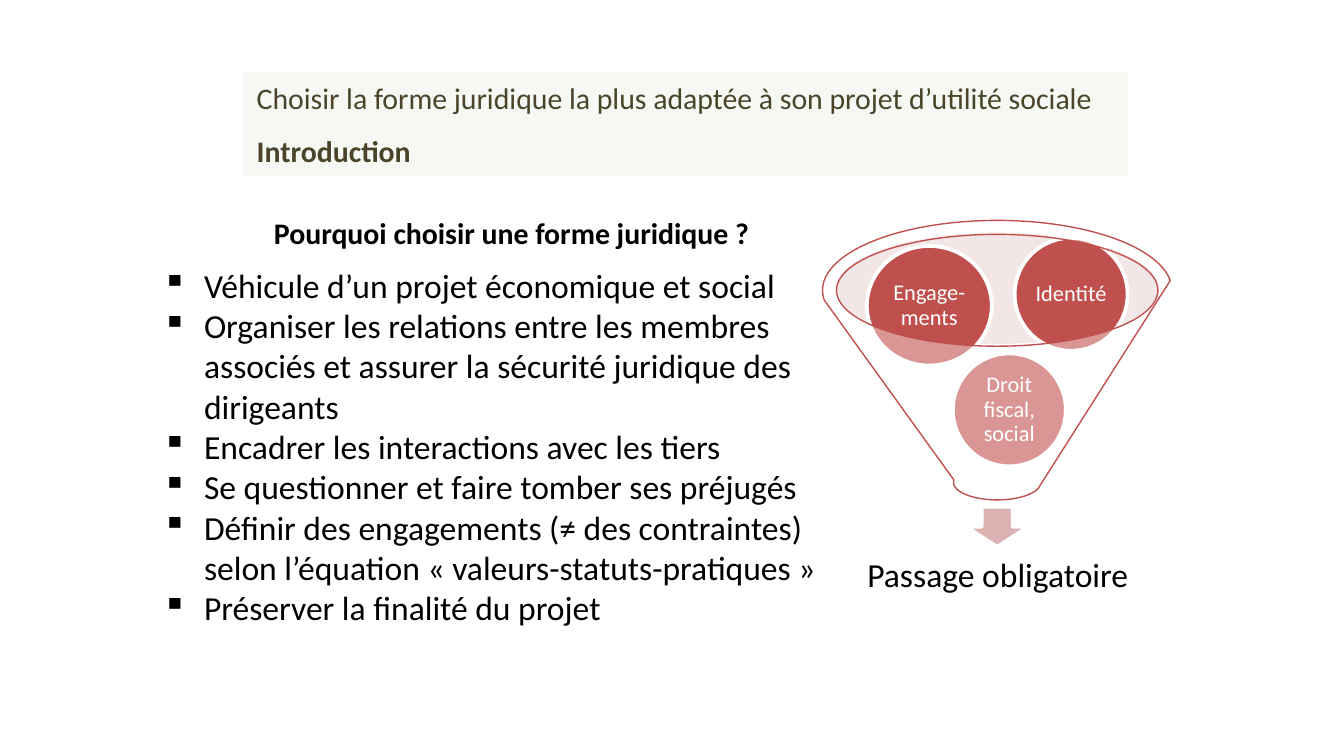
from lxml import etree
from pptx import Presentation
from pptx.dml.color import RGBColor
from pptx.enum.shapes import MSO_SHAPE
from pptx.enum.text import MSO_ANCHOR, MSO_AUTO_SIZE, PP_ALIGN
from pptx.oxml.ns import qn
from pptx.util import Inches, Pt

ELLIPSE, ARROW, FUNNEL = MSO_SHAPE.OVAL, MSO_SHAPE.DOWN_ARROW, MSO_SHAPE.FUNNEL
TOP, MIDDLE = MSO_ANCHOR.TOP, MSO_ANCHOR.MIDDLE
LEFT, CENTER = PP_ALIGN.LEFT, PP_ALIGN.CENTER
NO_FIT = MSO_AUTO_SIZE.NONE

TITLE_ONLY = 5
FONT = "Calibri"
COLORS = {
    "band": "F6F8F4",
    "olive": "4A452A",
    "black": "000000",
    "white": "FFFFFF",
    "red": "C0504D",
    "rim": "E2C2C2",
    "arrow": "DCB3B2",
}
HEADING = ["Choisir la forme juridique la plus adaptée à son projet d’utilité sociale",
           "Introduction"]
REASONS = [
    "Véhicule d’un projet économique et social",
    "Organiser les relations entre les membres associés et assurer la sécurité "
    "juridique des dirigeants",
    "Encadrer les interactions avec les tiers",
    "Se questionner et faire tomber ses préjugés",
    "Définir des engagements (≠ des contraintes) selon l’équation "
    "« valeurs-statuts-pratiques »",
    "Préserver la finalité du projet",
]
INGREDIENTS = [
    ("Droit fiscal, social", (7.09, 2.63, 0.84, 0.84)),
    ("Engage-ments", (6.45, 1.83, 0.93, 0.89)),
    ("Identité", (7.55, 1.77, 0.84, 0.84)),
]


def color(name):
    return RGBColor.from_string(COLORS[name])


def set_frame(frame, anchor=TOP, inset=None):
    values = {"word_wrap": True, "auto_size": NO_FIT, "vertical_anchor": anchor}
    if inset is not None:
        for side in ("left", "top", "right", "bottom"):
            values[f"margin_{side}"] = Inches(inset)
    for name, value in values.items():
        setattr(frame, name, value)


def add_bullet(para, indent=0.31):
    properties = para._p.get_or_add_pPr()
    properties.set("marL", str(Inches(indent)))
    properties.set("indent", str(-Inches(indent)))
    etree.SubElement(properties, qn("a:buChar")).set("char", "▪")


def write(frame, texts, size, font_color, align=LEFT, spacing=None, bold=False, bullets=False):
    for index, text in enumerate(texts):
        para = frame.paragraphs[0] if index == 0 else frame.add_paragraph()
        para.alignment = align
        para.line_spacing = spacing
        if bullets:
            add_bullet(para)
        span = para.add_run()
        span.text = text
        values = {"name": FONT, "size": Pt(size), "bold": bold}
        for name, value in values.items():
            setattr(span.font, name, value)
        span.font.color.rgb = color(font_color)


def add_text(slide, place, texts, size, anchor=TOP, inset=None, **text_format):
    box = slide.shapes.add_textbox(*map(Inches, place))
    set_frame(box.text_frame, anchor, inset)
    write(box.text_frame, texts, size, "black", **text_format)


def add_figure(slide, kind, place, fill, line=None, width=2, opacity=None):
    """Add a filled preset shape; opacity is a percentage."""
    shape = slide.shapes.add_shape(kind, *map(Inches, place))
    shape.shadow.inherit = False
    shape.fill.solid()
    shape.fill.fore_color.rgb = color(fill)
    if opacity is not None:
        fill_color = shape._element.spPr.find(qn("a:solidFill"))[0]
        etree.SubElement(fill_color, qn("a:alpha")).set("val", str(opacity * 1000))
    if line:
        shape.line.color.rgb = color(line)
        shape.line.width = Pt(width)
    else:
        shape.line.fill.background()
    return shape


def add_heading(slide):
    title = slide.shapes.title
    place = dict(left=1.81, top=0.54, width=6.58, height=0.77)
    for name, value in place.items():
        setattr(title, name, Inches(value))
    title.fill.solid()
    title.fill.fore_color.rgb = color("band")
    set_frame(title.text_frame)
    write(title.text_frame, HEADING, 16, "olive")
    section = title.text_frame.paragraphs[1]
    section.line_spacing = 1.5
    section.runs[0].font.bold = True


def add_funnel(slide):
    add_figure(slide, ELLIPSE, (6.22, 1.73, 2.4, 0.83), "rim", opacity=40)
    add_figure(slide, ARROW, (7.19, 3.77, 0.46, 0.3), "arrow", "white")
    add_text(slide, (6.31, 4.01, 2.23, 0.56), ["Passage obligatoire"], 18,
             MIDDLE, 0.14, align=CENTER, spacing=0.9)
    for label, place in INGREDIENTS:
        ball = add_figure(slide, ELLIPSE, place, "red", "white")
        set_frame(ball.text_frame, MIDDLE, 0.02)
        write(ball.text_frame, [label], 12, "white", CENTER, 0.9)
    add_figure(slide, FUNNEL, (6.12, 1.64, 2.6, 2.08), "white", "red", 0.75, opacity=40)


def main():
    deck = Presentation()
    deck.slide_width = Inches(10)
    deck.slide_height = deck.slide_width * 9 // 16
    slide = deck.slides.add_slide(deck.slide_layouts[TITLE_ONLY])
    add_heading(slide)
    add_funnel(slide)
    add_text(slide, (1.94, 1.55, 3.78, 0.37), ["Pourquoi choisir une forme juridique ?"],
             16, bold=True)
    add_text(slide, (1.11, 1.92, 5.29, 2.83), REASONS, 18, bullets=True)
    deck.save("out.pptx")


if __name__ == "__main__":
    main()
